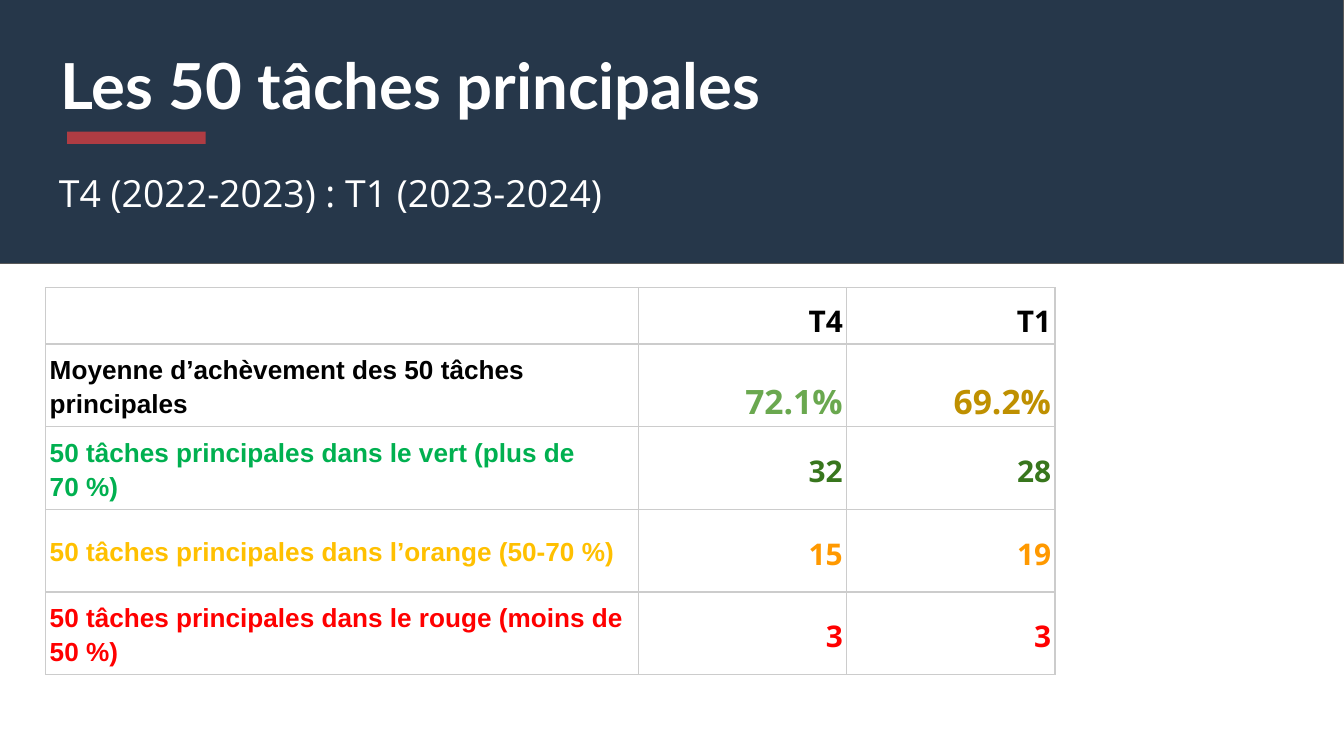
from dataclasses import dataclass
from typing import Optional

from lxml.etree import SubElement
from pptx import Presentation
from pptx.dml.color import RGBColor
from pptx.enum.shapes import MSO_SHAPE
from pptx.enum.text import MSO_ANCHOR, PP_ALIGN
from pptx.oxml.ns import qn
from pptx.util import Inches, Pt


@dataclass(frozen=True)
class Theme:
    navy: str = "26374A"
    outline: str = "595959"
    accent: str = "AF3C43"
    grid: str = "CCCCCC"
    white: str = "FFFFFF"
    black: str = "000000"
    title_font: str = "Lato"
    body_font: str = "Open Sans"
    label_font: str = "Arial"
    title_size: int = 34
    subtitle_size: int = 20
    average_size: int = 18
    value_size: int = 16
    label_size: int = 14
    rule_width: float = 0.75


THEME = Theme()
NBSP = chr(160)


@dataclass(frozen=True)
class Figure:
    text: str
    color: str
    size: int = THEME.value_size


@dataclass(frozen=True)
class TaskRow:
    label: str
    color: str
    figures: tuple[Figure, Figure]
    anchor: MSO_ANCHOR = MSO_ANCHOR.MIDDLE


TASK_ROWS = [
    TaskRow("", THEME.black,
            (Figure("T4", THEME.black), Figure("T1", THEME.black)),
            MSO_ANCHOR.BOTTOM),
    TaskRow(f"Moyenne d’achèvement des 50{NBSP}tâches principales", THEME.black,
            (Figure("72.1%", "6AA84F", THEME.average_size),
             Figure("69.2%", "BF9000", THEME.average_size)),
            MSO_ANCHOR.BOTTOM),
    TaskRow(f"50{NBSP}tâches principales dans le vert (plus de 70{NBSP}%)", "00B050",
            (Figure("32", "38761D"), Figure("28", "38761D"))),
    TaskRow(f"50{NBSP}tâches principales dans l’orange (50-70{NBSP}%)", "FFC000",
            (Figure("15", "FF9900"), Figure("19", "FF9900"))),
    TaskRow(f"50 tâches principales dans le rouge (moins de 50{NBSP}%)", "FF0000",
            (Figure("3", "FF0000"), Figure("3", "FF0000"))),
]


def write_text(frame, text: str, *, font: str, size: int, color: str,
               bold: bool = False, align: PP_ALIGN = PP_ALIGN.LEFT,
               spacing: float = 1.0) -> None:
    frame.word_wrap = True
    paragraph = frame.paragraphs[0]
    paragraph.alignment = align
    paragraph.line_spacing = spacing
    paragraph.font.size = Pt(size)
    if text:
        run = paragraph.add_run()
        run.text = text
        run.font.name = font
        run.font.size = Pt(size)
        run.font.bold = bold
        run.font.color.rgb = RGBColor.from_string(color)


def add_heading(slide, text: str, left: float, top: float, width: float,
                height: float, **style) -> None:
    frame = slide.shapes.add_textbox(
        Inches(left), Inches(top), Inches(width), Inches(height)).text_frame
    frame.margin_left = frame.margin_right = Inches(0.1)
    frame.margin_top = frame.margin_bottom = Inches(0.1)
    write_text(frame, text, color=THEME.white, **style)


def add_bar(slide, left: float, top: float, width: float, height: float,
            fill: str, outline: Optional[str] = None) -> None:
    bar = slide.shapes.add_shape(
        MSO_SHAPE.RECTANGLE,
        Inches(left), Inches(top), Inches(width), Inches(height))
    bar.shadow.inherit = False
    bar.fill.solid()
    bar.fill.fore_color.rgb = RGBColor.from_string(fill)
    if outline:
        bar.line.color.rgb = RGBColor.from_string(outline)
        bar.line.width = Pt(THEME.rule_width)
    else:
        bar.line.fill.background()


def rule_cell(cell) -> None:
    properties = cell._tc.get_or_add_tcPr()
    for position, side in enumerate(("a:lnL", "a:lnR", "a:lnT", "a:lnB")):
        border = SubElement(properties, qn(side), w=str(Pt(THEME.rule_width)))
        fill = SubElement(border, qn("a:solidFill"))
        SubElement(fill, qn("a:srgbClr"), val=THEME.grid)
        properties.insert(position, border)


def fill_cell(cell, text: str, anchor: MSO_ANCHOR, **style) -> None:
    cell.margin_left = cell.margin_right = Inches(0.03)
    cell.margin_top = cell.margin_bottom = Inches(0.02)
    cell.vertical_anchor = anchor
    cell.fill.background()
    rule_cell(cell)
    write_text(cell.text_frame, text, bold=True, spacing=1.15, **style)


def add_task_table(slide, rows: list[TaskRow]) -> None:
    label_width, figure_width = 4.41, 1.55
    header_height, table_height = 0.42, 2.88
    table = slide.shapes.add_table(
        len(rows), 3, Inches(0.34), Inches(2.14),
        Inches(label_width + 2 * figure_width), Inches(table_height)).table
    table.first_row = table.horz_banding = False
    for column, width in zip(table.columns,
                             (label_width, figure_width, figure_width)):
        column.width = Inches(width)
    row_height = (table_height - header_height) / (len(rows) - 1)
    for index, row in enumerate(rows):
        table.rows[index].height = Inches(row_height if index else header_height)
        fill_cell(table.cell(index, 0), row.label, MSO_ANCHOR.MIDDLE,
                  font=THEME.label_font, size=THEME.label_size, color=row.color)
        for column, figure in enumerate(row.figures, start=1):
            fill_cell(table.cell(index, column), figure.text, row.anchor,
                      font=THEME.body_font, size=figure.size,
                      color=figure.color, align=PP_ALIGN.RIGHT)


def main() -> None:
    deck = Presentation()
    deck.slide_width, deck.slide_height = Inches(10), Inches(10 * 9 / 16)
    slide = deck.slides.add_slide(deck.slide_layouts[6])
    add_bar(slide, -0.05, -0.01, 10.05, 1.97, THEME.navy, THEME.outline)
    add_heading(slide, "Les 50 tâches principales", 0.35, 0.24, 7.67, 1.05,
                font=THEME.title_font, size=THEME.title_size, bold=True)
    add_bar(slide, 0.5, 0.98, 1.03, 0.09, THEME.accent)
    add_heading(slide, "T4 (2022-2023) : T1 (2023-2024)", 0.34, 1.17, 7.71, 0.5,
                font=THEME.body_font, size=THEME.subtitle_size)
    add_task_table(slide, TASK_ROWS)
    deck.save("out.pptx")


if __name__ == "__main__":
    main()
